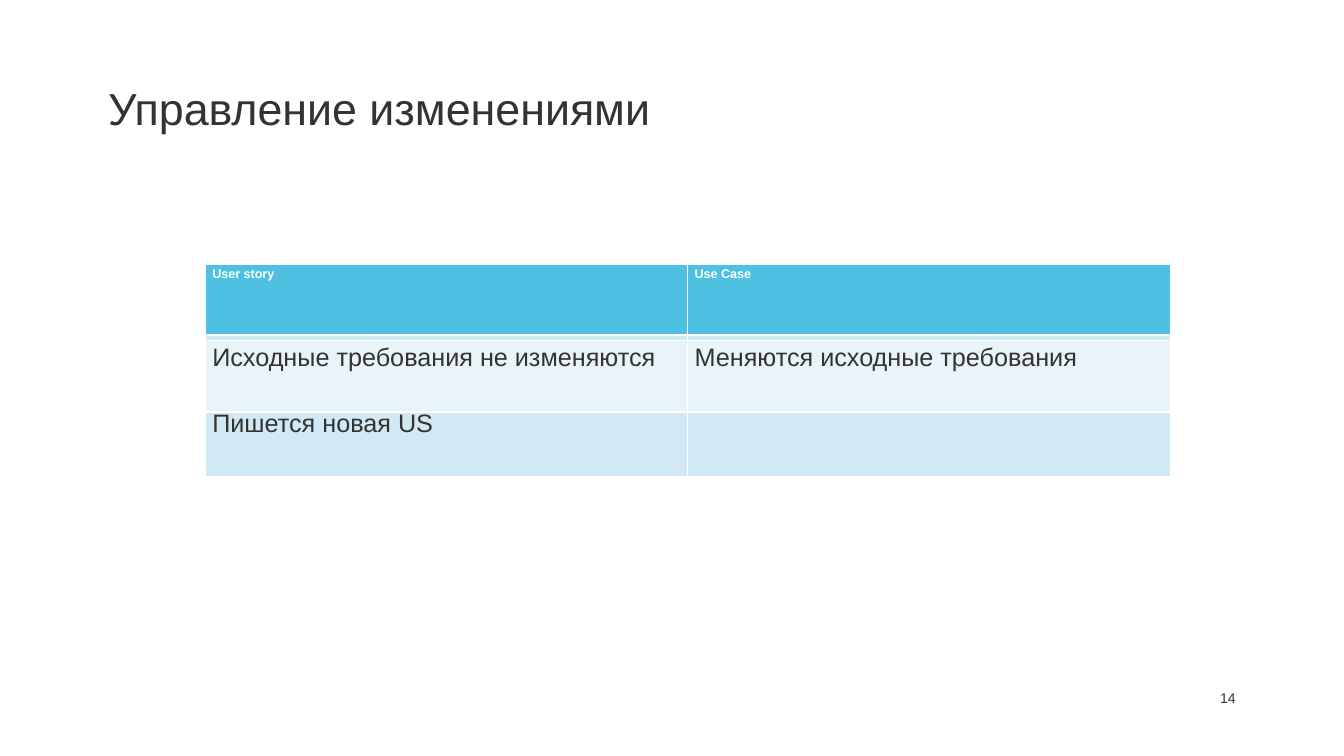
from lxml.etree import SubElement
from pptx import Presentation
from pptx.dml.color import RGBColor
from pptx.enum.text import MSO_ANCHOR, PP_ALIGN
from pptx.oxml.ns import qn
from pptx.util import Cm, Pt

WHITE = RGBColor(0xFF, 0xFF, 0xFF)
INK = RGBColor(0x33, 0x33, 0x32)
HEADER = RGBColor(0x4E, 0xC1, 0xE2)
BAND_DARK = RGBColor(0xD0, 0xE9, 0xF4)
BAND_LIGHT = RGBColor(0xE9, 0xF4, 0xFA)

UNCHANGED = "Исходные требования не изменяются"
REQUIREMENT_ROWS = [
    (12.85, (UNCHANGED, ""), BAND_LIGHT),
    (15.37, ("Пишется новая US", ""), BAND_DARK),
    (12.88, (UNCHANGED, "Меняются исходные требования"), BAND_LIGHT),
]


class Deck:
    font_name = "Arial"
    table_left = 7.77
    column_width = 18.23
    row_height = 2.69

    def __init__(self, width, height):
        self.presentation = Presentation()
        self.presentation.slide_width = Cm(width)
        self.presentation.slide_height = Cm(height)
        self.slide = self.presentation.slides.add_slide(self.presentation.slide_layouts[5])

    def style(self, paragraph, size, color=INK, bold=False):
        font = paragraph.font
        font.name, font.size, font.bold = self.font_name, Pt(size), bold
        font.color.rgb = color

    def fill_frame(self, frame, text, size, align, anchor):
        frame.margin_left = frame.margin_top = frame.margin_right = frame.margin_bottom = 0
        frame.word_wrap = True
        frame.vertical_anchor = anchor
        frame.text = text
        paragraph = frame.paragraphs[0]
        paragraph.alignment = align
        self.style(paragraph, size)
        return paragraph

    def title(self, text, left, top, width, height):
        heading = self.slide.shapes.title
        heading.left, heading.top = Cm(left), Cm(top)
        heading.width, heading.height = Cm(width), Cm(height)
        paragraph = self.fill_frame(heading.text_frame, text, 48, PP_ALIGN.LEFT, MSO_ANCHOR.TOP)
        paragraph.line_spacing = 0.96

    def page_number(self, text, left, top, width, height):
        box = self.slide.shapes.add_textbox(Cm(left), Cm(top), Cm(width), Cm(height))
        self.fill_frame(box.text_frame, text, 15, PP_ALIGN.RIGHT, MSO_ANCHOR.BOTTOM)

    def borders(self, cell, bottom):
        properties = cell._tc.get_or_add_tcPr()
        for position, (side, width) in enumerate(
            [("a:lnL", 1), ("a:lnR", 1), ("a:lnT", 1), ("a:lnB", bottom)]
        ):
            line = properties.makeelement(qn(side), {"w": str(Pt(width))})
            properties.insert(position, line)
            color = SubElement(SubElement(line, qn("a:solidFill")), qn("a:srgbClr"))
            color.set("val", str(WHITE))

    def table(self, top, rows, fills, size, color=INK, bold=False):
        columns = len(rows[0])
        table = self.slide.shapes.add_table(
            len(rows), columns, Cm(self.table_left), Cm(top),
            Cm(self.column_width * columns), Cm(self.row_height * len(rows)),
        ).table
        for row_index, (texts, fill) in enumerate(zip(rows, fills)):
            for column_index, text in enumerate(texts):
                cell = table.cell(row_index, column_index)
                cell.fill.solid()
                cell.fill.fore_color.rgb = fill
                self.borders(cell, 3 if row_index == 0 else 1)
                cell.text = text
                self.style(cell.text_frame.paragraphs[0], size, color, bold)


def main():
    deck = Deck(50.8, 28.58)
    deck.title("Управление изменениями", 4.09, 3.18, 32.92, 2.36)
    deck.table(
        9.98, [("User story", "Use Case"), ("", ""), ("", "")],
        [HEADER, BAND_DARK, BAND_LIGHT], 13.5, WHITE, True,
    )
    for top, texts, fill in REQUIREMENT_ROWS:
        deck.table(top, [texts], [fill], 27)
    deck.page_number("14", 43.05, 25.1, 3.66, 1.6)
    deck.presentation.save("out.pptx")


if __name__ == "__main__":
    main()
